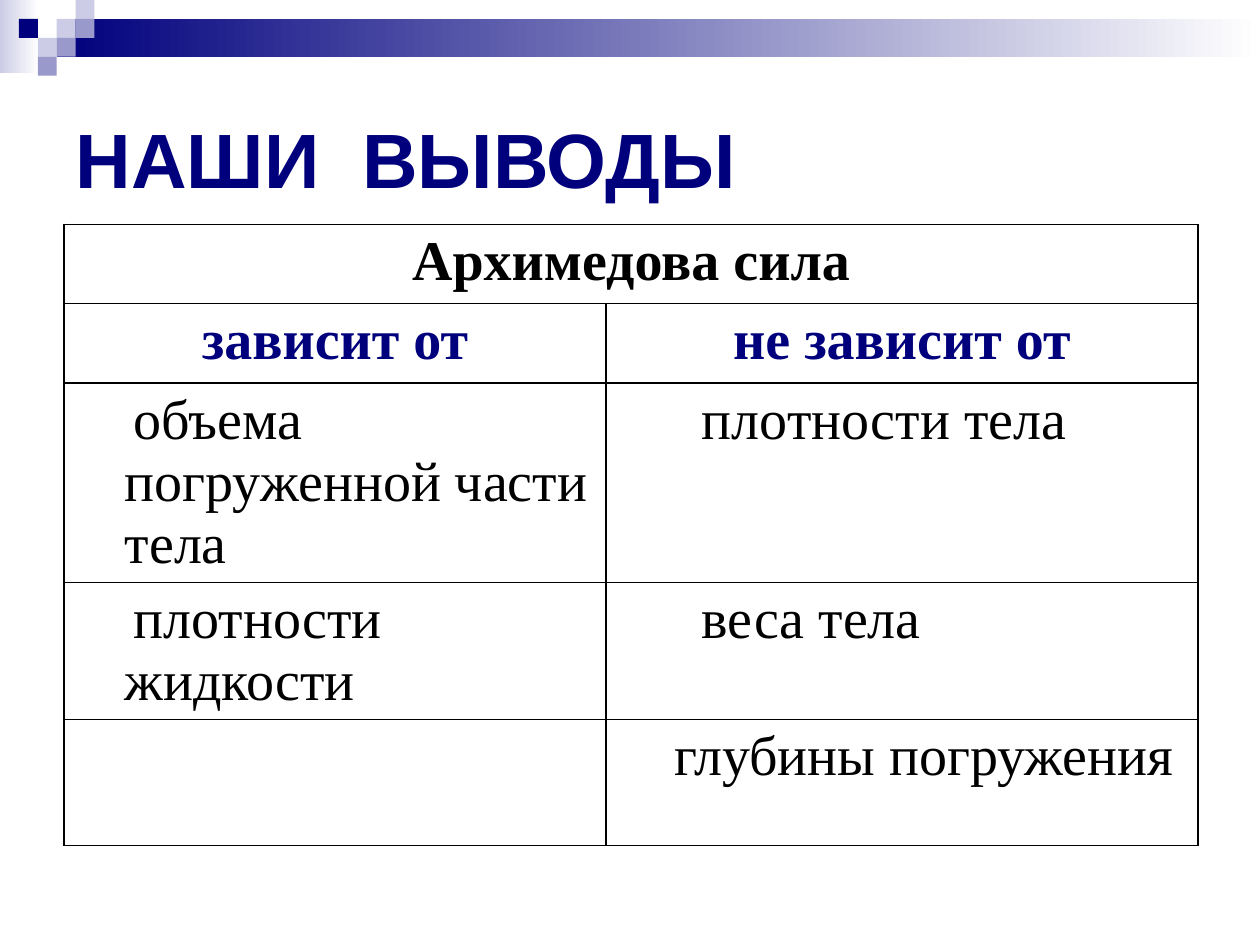
"""Build the slide that sums up what the Archimedes force depends on."""
from lxml.etree import SubElement
from pptx import Presentation
from pptx.dml.color import RGBColor as Rgb
from pptx.enum.shapes import MSO_SHAPE as Shape
from pptx.enum.text import MSO_ANCHOR as Anchor, PP_ALIGN as Align
from pptx.oxml.ns import qn
from pptx.util import Inches, Pt

COLORS = {"navy": "00007D", "violet": "9999CC", "pale": "CCCCE6",
          "white": "FFFFFF", "black": "000000"}
UNIT = 0.15
SQUARES = [(3, 1, "pale"), (4, 0, "pale"), (4, 1, "violet"), (2, 2, "pale"),
           (1, 1, "navy"), (3, 2, "violet"), (2, 3, "violet")]
COLUMN_WIDTHS = [4.3, 4.7]
ROW_HEIGHTS = [0.63, 0.63, 1.58, 1.09, 1]
HEADINGS = ["зависит от", "не зависит от"]
FACTORS = [[("объема погруженной части тела", 0.07), ("плотности тела", 0.28)],
           [("плотности жидкости", 0.07), ("веса тела", 0.28)],
           [None, ("глубины погружения", 0.06)]]


class SlideBuilder:
    def __init__(self, slide):
        self.slide = slide
        self.title_font = "Arial"
        self.table_font = "Times New Roman"

    def color(self, name):
        return Rgb.from_string(COLORS[name])

    def format_font(self, font, name, size, color, bold):
        font.name, font.size, font.bold = name, Pt(size), bold
        font.color.rgb = self.color(color)

    def rectangle(self, left, top, width, height, start, end=None):
        box = self.slide.shapes.add_shape(
            Shape.RECTANGLE, *map(Inches, (left, top, width, height)))
        box.shadow.inherit = False
        box.line.fill.background()
        if end:
            box.fill.gradient()
            box.fill.gradient_angle = 0
            for stop, name in zip(box.fill.gradient_stops, (start, end)):
                stop.color.rgb = self.color(name)
        else:
            box.fill.solid()
            box.fill.fore_color.rgb = self.color(start)

    def title(self, text, left, top, width, height):
        box = self.slide.shapes.title
        box.left, box.top, box.width, box.height = map(
            Inches, (left, top, width, height))
        frame = box.text_frame
        frame.text = text
        frame.vertical_anchor = Anchor.MIDDLE
        para = frame.paragraphs[0]
        para.alignment = Align.LEFT
        self.format_font(para.runs[0].font, self.title_font, 44, "navy", True)

    def table(self, left, top, widths, heights):
        table = self.slide.shapes.add_table(
            len(heights), len(widths),
            *map(Inches, (left, top, sum(widths), sum(heights)))).table
        table.first_row = table.horz_banding = False
        for column, width in zip(table.columns, widths):
            column.width = Inches(width)
        for row, height in zip(table.rows, heights):
            row.height = Inches(height)
        for cell in table.iter_cells():
            self.borders(cell)
            cell.fill.background()
        return table

    def borders(self, cell):
        properties = cell._tc.get_or_add_tcPr()
        for side in ("lnL", "lnR", "lnT", "lnB"):
            line = SubElement(properties, qn(f"a:{side}"), w=str(Pt(1)))
            fill = SubElement(line, qn("a:solidFill"))
            SubElement(fill, qn("a:srgbClr"), val=COLORS["black"])

    def cell_text(self, cell, text, color="black", bold=False, indent=None):
        cell.text_frame.text = text
        para = cell.text_frame.paragraphs[0]
        if indent is None:
            para.alignment = Align.CENTER
        else:
            properties = para._p.get_or_add_pPr()
            properties.set("marL", str(Inches(0.38)))
            properties.set("indent", str(Inches(indent)))
        self.format_font(para.runs[0].font, self.table_font, 32, color, bold)


def main():
    deck = Presentation()
    deck.slide_width, deck.slide_height = Inches(10), Inches(7.5)
    page = SlideBuilder(deck.slides.add_slide(deck.slide_layouts[5]))

    page.rectangle(0, 0, 0.31, 0.58, "pale", "white")
    page.rectangle(0.45, UNIT, 9.55, 0.3, "navy", "white")
    for column, row, color in SQUARES:
        page.rectangle(column * UNIT, row * UNIT, UNIT, UNIT, color)
    page.title("НАШИ  ВЫВОДЫ", 0.5, 0.5, 9, 1.5)

    table = page.table(0.51, 1.78, COLUMN_WIDTHS, ROW_HEIGHTS)
    table.cell(0, 0).merge(table.cell(0, 1))
    page.cell_text(table.cell(0, 0), "Архимедова сила", bold=True)
    for column, heading in enumerate(HEADINGS):
        page.cell_text(table.cell(1, column), heading, "navy", True)
    for row, factors in enumerate(FACTORS, start=2):
        for column, factor in enumerate(factors):
            if factor:
                text, indent = factor
                page.cell_text(table.cell(row, column), text, indent=indent)

    deck.save("out.pptx")


if __name__ == "__main__":
    main()
